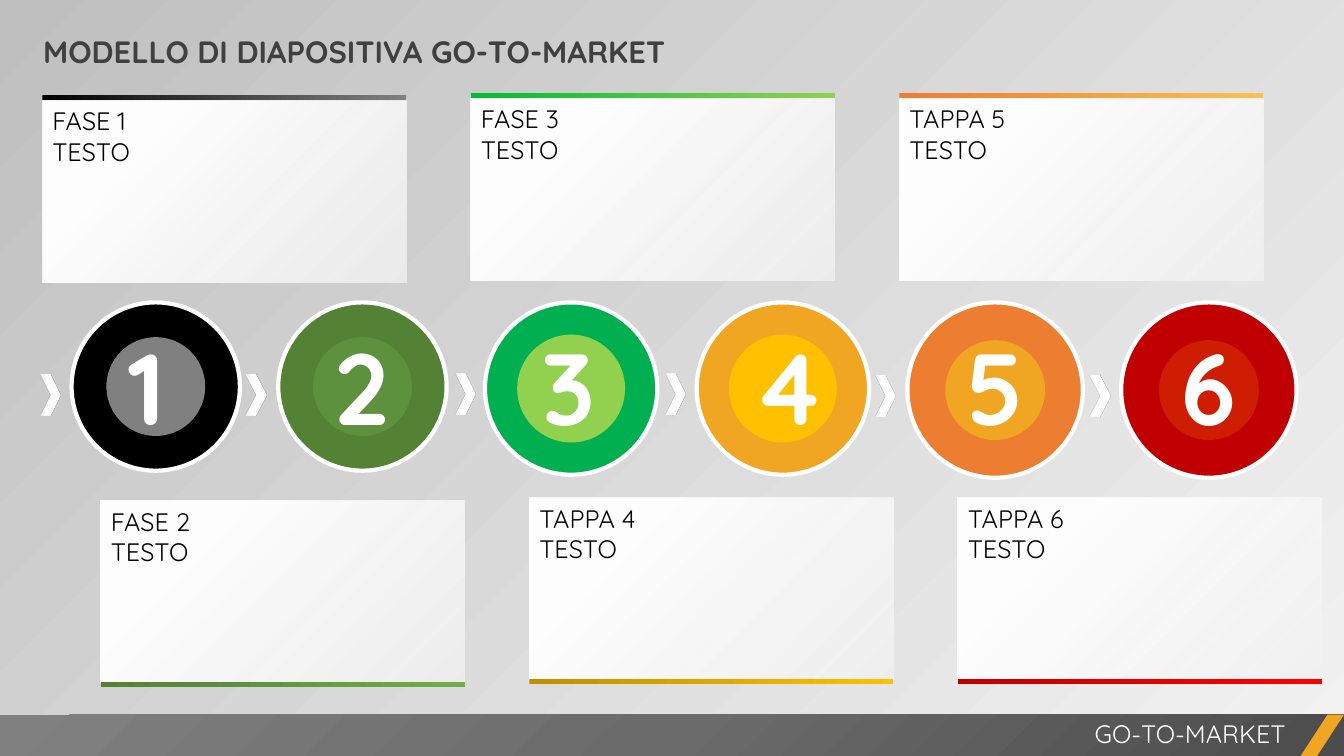
from dataclasses import dataclass
from typing import Any

from lxml.etree import Element, SubElement
from pptx import Presentation
from pptx.dml.color import RGBColor as Rgb
from pptx.enum.shapes import MSO_SHAPE as Kind
from pptx.enum.text import MSO_ANCHOR as Anchor, MSO_AUTO_SIZE as Fit, PP_ALIGN as Align
from pptx.oxml.ns import qn
from pptx.util import Inches, Pt

HUE = {
    "white": "FFFFFF", "black": "000000", "ink": "404040", "pale": "F2F2F2",
    "silver": "BFBFBF", "grey": "808080", "mid": "6B6B6B", "coal": "4C4C4C",
    "moss": "548235", "fern": "5E913E", "leaf": "70AD47", "green": "00B050",
    "mint": "00BD32", "lime": "92D050", "amber": "F0A622", "gold": "FFC000",
    "bronze": "BF9000", "orange": "ED7D31", "peach": "F9C053",
    "red": "C00000", "brick": "CE1D02", "bright": "FF0000",
}
FONT = "Quicksand"
WIDE, HIGH = 13.33, 7.5
CARD_W, CARD_H, BAR_H, PITCH = 3.61, 1.8, 0.05, 4.25
DISC_Y, DIGIT_Y = 3, 3.17


@dataclass
class Stop:
    at: int
    hue: str
    solid: int = 100


@dataclass
class Box:
    x: float
    y: float
    w: float
    h: float


@dataclass
class Stage:
    word: str
    card_y: float
    bar: tuple[str, str]
    disc_x: float
    disc: float
    core: float
    outer: str
    inner: str
    digit_x: float
    mark_x: float
    mark_y: float


STAGES = [
    Stage("FASE", 1, ("black", "grey"), 0.71, 1.67, 0.98, "black", "grey", 1.18, 0.4, 3.72),
    Stage("FASE", 4.97, ("moss", "leaf"), 2.76, 1.67, 0.98, "moss", "fern", 3.22, 2.44, 3.72),
    Stage("FASE", 0.98, ("mint", "lime"), 4.81, 1.71, 1.07, "green", "lime", 5.28, 4.52, 3.71),
    Stage("TAPPA", 4.94, ("bronze", "gold"), 6.91, 1.71, 1.07, "amber", "gold", 7.37, 6.6, 3.71),
    Stage("TAPPA", 0.98, ("orange", "peach"), 9, 1.74, 0.99, "orange", "amber", 9.49, 8.68, 3.73),
    Stage("TAPPA", 4.94, ("red", "bright"), 11.12, 1.74, 0.99, "red", "brick", 11.62, 10.81, 3.73),
]
SHEEN = [Stop(0, "pale", 80), Stop(74, "white")]
GLINT = [Stop(0, "white", 62), Stop(31, "white")]


def apply(item: Any, look: dict[str, Any]) -> None:
    for name, value in look.items():
        setattr(item, name, value)


def shade(home: Any, stops: list[Stop], turn: int | None) -> None:
    grad = Element(qn("a:gradFill"), rotWithShape="1")
    row = SubElement(grad, qn("a:gsLst"))
    for stop in stops:
        mark = SubElement(row, qn("a:gs"), pos=str(stop.at * 1000))
        tint = SubElement(mark, qn("a:srgbClr"), val=HUE[stop.hue])
        if stop.solid < 100:
            SubElement(tint, qn("a:alpha"), val=str(stop.solid * 1000))
    if turn is None:
        ring = SubElement(grad, qn("a:path"), path="circle")
        SubElement(ring, qn("a:fillToRect"), l="100000", t="100000")
    else:
        SubElement(grad, qn("a:lin"), ang=str(turn * 60000), scaled="0")
    home.replace(home.find(qn("a:solidFill")), grad)


def draw(slide: Any, kind: Kind, box: Box, fill: str | list[Stop],
         turn: int | None = 0, edge: str = "", bend: float | None = None) -> Any:
    shape = slide.shapes.add_shape(kind, *map(Inches, (box.x, box.y, box.w, box.h)))
    shape.shadow.inherit = False
    if bend is not None:
        shape.adjustments[0] = bend
    shape.fill.solid()
    if isinstance(fill, str):
        shape.fill.fore_color.rgb = Rgb.from_string(HUE[fill])
    else:
        shade(shape._element.spPr, fill, turn)
    if edge:
        shape.line.color.rgb = Rgb.from_string(HUE[edge])
        shape.line.width = Pt(3)
    else:
        shape.line.fill.background()
    return shape


def write(shape: Any, lines: list[str], size: int, hue: str,
          bold: bool = False, side: Align = Align.LEFT) -> None:
    frame = shape.text_frame
    apply(frame, {"word_wrap": True, "vertical_anchor": Anchor.TOP})
    frame.text = "\n".join(lines)
    for para in frame.paragraphs:
        para.alignment = side
        for run in para.runs:
            apply(run.font, {"name": FONT, "size": Pt(size), "bold": bold})
            run.font.color.rgb = Rgb.from_string(HUE[hue])


def label(slide: Any, box: Box, text: str, size: int, hue: str,
          bold: bool = False, side: Align = Align.LEFT) -> None:
    shape = slide.shapes.add_textbox(*map(Inches, (box.x, box.y, box.w, box.h)))
    write(shape, [text], size, hue, bold, side)
    shape.text_frame.auto_size = Fit.SHAPE_TO_FIT_TEXT


def card(slide: Any, rank: int, stage: Stage) -> None:
    col, low = divmod(rank, 2)
    x = (1 if low else 0.42) + PITCH * col
    y = stage.card_y
    panel = draw(slide, Kind.ROUNDED_RECTANGLE, Box(x, y, CARD_W, CARD_H), SHEEN, 225, bend=0)
    write(panel, [f"{stage.word} {rank + 1}", "TESTO"], 18, "black")
    bar_y = y + CARD_H if low else y - 0.06
    first, last = stage.bar
    draw(slide, Kind.ROUNDED_RECTANGLE, Box(x, bar_y, CARD_W, BAR_H),
         [Stop(0, first), Stop(100, last)], bend=0)


def badge(slide: Any, rank: int, stage: Stage) -> None:
    gap = (stage.disc - stage.core) / 2
    draw(slide, Kind.OVAL, Box(stage.disc_x, DISC_Y, stage.disc, stage.disc),
         stage.outer, edge="white")
    draw(slide, Kind.OVAL, Box(stage.disc_x + gap, DISC_Y + gap, stage.core, stage.core),
         stage.inner)
    draw(slide, Kind.CHEVRON, Box(stage.mark_x, stage.mark_y, 0.2, 0.4), GLINT)
    wide = 0.92 if rank else 0.72
    label(slide, Box(stage.digit_x, DIGIT_Y, wide, 1.31), str(rank + 1), 72, "white", True)


def main() -> None:
    deck = Presentation()
    apply(deck, {"slide_width": Inches(WIDE), "slide_height": Inches(HIGH)})
    slide = deck.slides.add_slide(deck.slide_layouts[6])
    slide.background.fill.solid()
    back = slide._element.find(".//" + qn("p:bgPr"))
    shade(back, [Stop(0, "pale", 40), Stop(100, "silver")], 225)

    label(slide, Box(0.33, 0.28, 8.61, 0.47), "MODELLO DI DIAPOSITIVA GO-TO-MARKET",
          22, "ink", True)
    draw(slide, Kind.RECTANGLE, Box(0, 7.09, WIDE, 0.41),
         [Stop(0, "coal"), Stop(50, "mid"), Stop(100, "grey")], None)
    draw(slide, Kind.PARALLELOGRAM, Box(12.9, 7.09, 0.43, 0.41), "amber", bend=0.65)
    label(slide, Box(5.25, 7.08, 7.6, 0.4), "GO-TO-MARKET", 18, "white", side=Align.RIGHT)

    for rank, stage in enumerate(STAGES):
        badge(slide, rank, stage)
        card(slide, rank, stage)
    deck.save("out.pptx")


if __name__ == "__main__":
    main()
